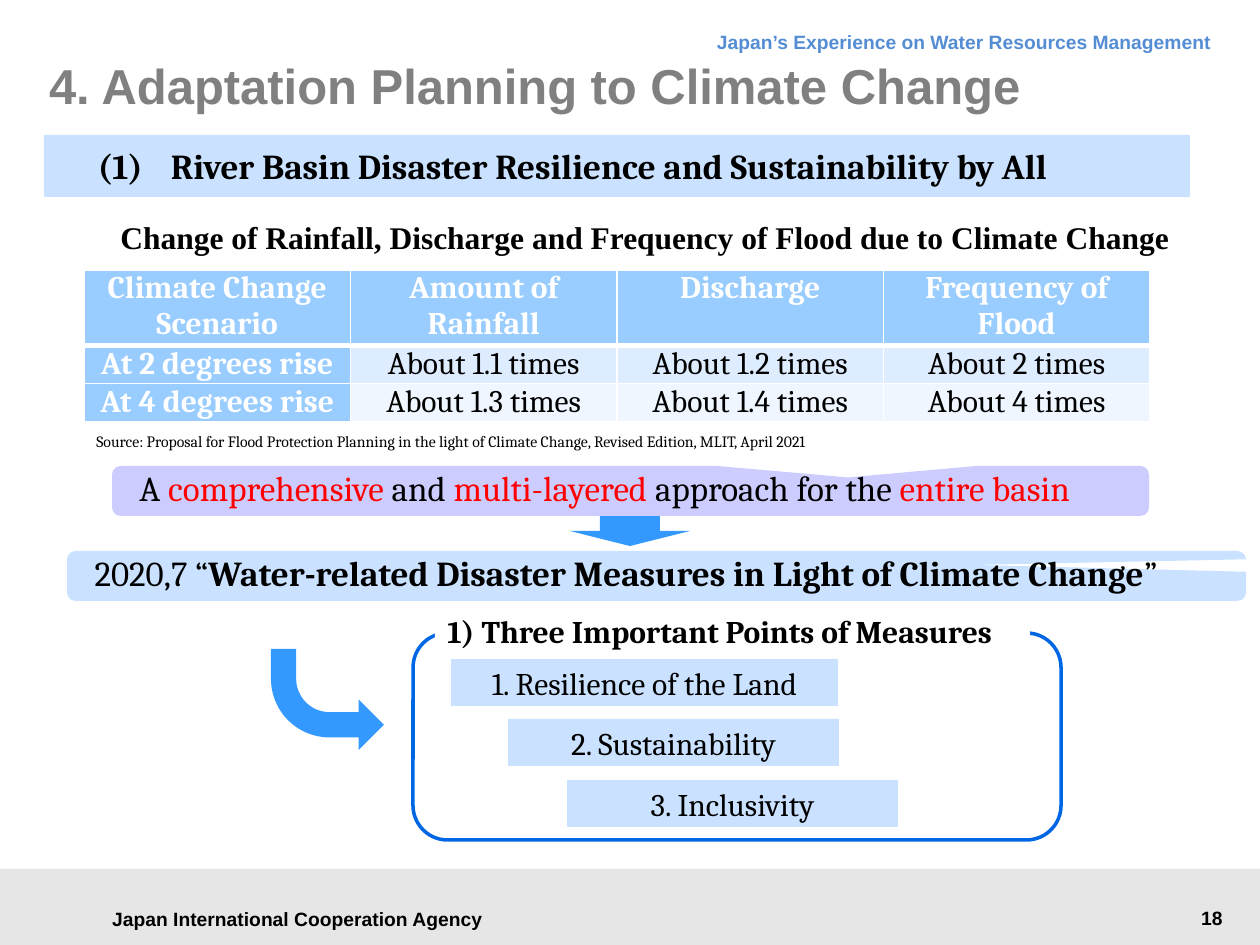
import dataclasses
import pptx
import pptx.util
import pptx.dml.color
import pptx.enum.shapes
import pptx.enum.text
import pptx.oxml
import pptx.oxml.ns

Kind = pptx.enum.shapes.MSO_SHAPE
Align = pptx.enum.text.PP_ALIGN
Anchor = pptx.enum.text.MSO_ANCHOR
Pt = pptx.util.Pt


def px(count):
    return pptx.util.Emu(round(count * 914400 / 126))


def rgb(code):
    return pptx.dml.color.RGBColor.from_string(code)


@dataclasses.dataclass(frozen=True)
class Theme:
    black: str = "000000"
    white: str = "FFFFFF"
    red: str = "FF0000"
    gray: str = "808080"
    band: str = "E6E6E6"
    steel: str = "548DD4"
    pale: str = "CAE2FF"
    lilac: str = "CCCCFF"
    arrow: str = "3399FF"
    edge: str = "0067E4"
    head: str = "99CCFF"
    rows: tuple = ("DEECFF", "EFF6FF")
    sans: str = "Arial"
    serif: str = "Cambria"
    times: str = "Times New Roman"
    title: int = 28
    lead: int = 20
    body: int = 18
    small: int = 11
    note: int = 9


class Deck:
    """Holds the theme and the current slide, and draws each kind of element."""

    def __init__(self, theme):
        self.theme = theme
        self.show = pptx.Presentation()
        self.show.slide_width, self.show.slide_height = px(1260), px(945)
        self.slide = self.show.slides.add_slide(self.show.slide_layouts[5])

    def words(self, frame, text, size, font=None, color=None, bold=False,
              align=Align.LEFT, anchor=Anchor.TOP, inset=None, line=None):
        frame.word_wrap = True
        frame.vertical_anchor = anchor
        if inset:
            (frame.margin_left, frame.margin_top,
             frame.margin_right, frame.margin_bottom) = map(px, inset)
        para = frame.paragraphs[0]
        para.alignment = align
        if line:
            para.line_spacing = Pt(line)
        parts = [(text, {})] if isinstance(text, str) else text
        for part, look in parts:
            run = para.add_run()
            run.text = part
            if "color" in look:
                run.font.color.rgb = rgb(look["color"])
            if "bold" in look:
                run.font.bold = look["bold"]
        para.font.name = font or self.theme.serif
        para.font.size = Pt(size)
        para.font.bold = bold
        para.font.color.rgb = rgb(color or self.theme.black)
        return para

    def title(self, box, text, **look):
        shape = self.slide.shapes.title
        shape.left, shape.top, shape.width, shape.height = map(px, box)
        self.words(shape.text_frame, text, self.theme.title, **look)

    def label(self, box, text, size, **look):
        shape = self.slide.shapes.add_textbox(*map(px, box))
        self.words(shape.text_frame, text, size, **look)

    def shape(self, kind, box, fill, edge=None, adjust=()):
        shape = self.slide.shapes.add_shape(kind, *map(px, box))
        shape.shadow.inherit = False
        shape.fill.solid()
        shape.fill.fore_color.rgb = rgb(fill)
        if edge:
            shape.line.color.rgb = rgb(edge)
            shape.line.width = Pt(2)
        else:
            shape.line.fill.background()
        for i, value in enumerate(adjust):
            shape.adjustments[i] = value
        return shape

    def panel(self, box, fill, text, size, kind=Kind.RECTANGLE, adjust=(), **look):
        shape = self.shape(kind, box, fill, adjust=adjust)
        return self.words(shape.text_frame, text, size, **look)

    def border(self, cell, side, width):
        space = pptx.oxml.ns.nsdecls("a")
        cell._tc.get_or_add_tcPr().append(pptx.oxml.parse_xml(
            f'<a:ln{side} {space} w="{Pt(width)}"><a:solidFill>'
            f'<a:srgbClr val="{self.theme.white}"/></a:solidFill></a:ln{side}>'))

    def table(self, box, rows, heights):
        theme = self.theme
        grid = self.slide.shapes.add_table(len(rows), len(rows[0]), *map(px, box)).table
        for r, row in enumerate(rows):
            grid.rows[r].height = px(heights[r])
            for c, text in enumerate(row):
                cell = grid.cell(r, c)
                head = r == 0 or c == 0
                thick = {(0, "B"), (1, "T")}
                for side in "LRTB":
                    self.border(cell, side, 3 if (r, side) in thick else 1)
                cell.fill.solid()
                cell.fill.fore_color.rgb = rgb(theme.head if head else theme.rows[r - 1])
                cell.margin_left = cell.margin_right = px(9)
                cell.margin_top = cell.margin_bottom = 0
                self.words(cell.text_frame, text, theme.body, bold=head,
                           color=theme.white if head else theme.black,
                           align=Align.CENTER)


def main():
    theme = Theme()
    deck = Deck(theme)
    small = {"size": theme.small, "font": theme.sans, "bold": True}
    deck.shape(Kind.RECTANGLE, (0, 869, 1260, 76), theme.band)
    deck.label((89, 897, 417, 43), "Japan International Cooperation Agency",
               align=Align.CENTER, anchor=Anchor.MIDDLE, **small)
    deck.label((343, 16, 881, 48), "Japan’s Experience on Water Resources Management",
               color=theme.steel, align=Align.RIGHT, line=18, **small)
    deck.label((1037, 900, 198, 37), "18", align=Align.RIGHT, **small)
    deck.title((49, 35, 1196, 100), "4. Adaptation Planning to Climate Change",
               font=theme.sans, color=theme.gray, bold=True,
               anchor=Anchor.MIDDLE, inset=(0, 0, 0, 0))

    para = deck.panel((44, 135, 1146, 62), theme.pale,
                      "(1)\tRiver Basin Disaster Resilience and Sustainability by All",
                      theme.lead, bold=True, inset=(54, 10, 44, 10))
    props = para._p.get_or_add_pPr()
    props.set("marL", str(px(73)))
    props.set("indent", str(px(-73)))

    deck.shape(Kind.DOWN_ARROW, (570, 516, 120, 30), theme.arrow)
    red, bold = {"color": theme.red}, {"bold": True}
    calls = (
        ((112, 466, 1037, 50), theme.lilac, (0.21, -0.27, 0.17),
         [("A ", {}), ("comprehensive", red), (" and ", {}), ("multi-layered", red),
          (" approach for the ", {}), ("entire basin", red)]),
        ((67, 551, 1179, 50), theme.pale, (0.27, -0.22, 0.17),
         [("2020,7 “", {}),
          ("Water-related Disaster Measures in Light of Climate Change", bold),
          ("”", {})]),
    )
    for box, fill, adjust, text in calls:
        deck.panel(box, fill, text, theme.lead, kind=Kind.ROUNDED_RECTANGULAR_CALLOUT,
                   adjust=adjust, anchor=Anchor.MIDDLE, inset=(25, 5, 15, 5), line=20)

    deck.table((84, 270, 1066, 150), (
        ("Climate Change Scenario", "Amount of Rainfall", "Discharge", "Frequency of Flood"),
        ("At 2 degrees rise", "About 1.1 times", "About 1.2 times", "About 2 times"),
        ("At 4 degrees rise", "About 1.3 times", "About 1.4 times", "About 4 times"),
    ), (74, 38, 38))
    deck.label((112, 228, 1066, 29),
               "Change of Rainfall, Discharge and Frequency of Flood due to Climate Change",
               theme.body, font=theme.times, bold=True, align=Align.CENTER,
               inset=(0, 0, 0, 0), line=16)

    deck.shape(Kind.ROUNDED_RECTANGLE, (413, 633, 648, 207), theme.white, theme.edge)
    deck.panel((435, 606, 595, 50), theme.white, "1) Three Important Points of Measures",
               theme.body, bold=True)
    points = ((451, 387, "1. Resilience of the Land"),
              (508, 331, "2. Sustainability"),
              (567, 331, "3. Inclusivity"))
    for i, (left, width, text) in enumerate(points):
        deck.panel((left, 659 + i * 121 // 2, width, 47), theme.pale, text, theme.body,
                   align=Align.CENTER, anchor=Anchor.MIDDLE)

    bend = deck.shape(Kind.BENT_ARROW, (271, 649, 113, 101), theme.arrow,
                      adjust=(0.25, 0.25, 0.25, 0.58))
    bend.rotation = 180
    bend._element.spPr.xfrm.set("flipH", "1")
    deck.label((84, 426, 861, 32),
               "Source: Proposal for Flood Protection Planning in the light of "
               "Climate Change, Revised Edition, MLIT, April 2021",
               theme.note, align=Align.JUSTIFY)
    deck.show.save("out.pptx")


if __name__ == "__main__":
    main()
